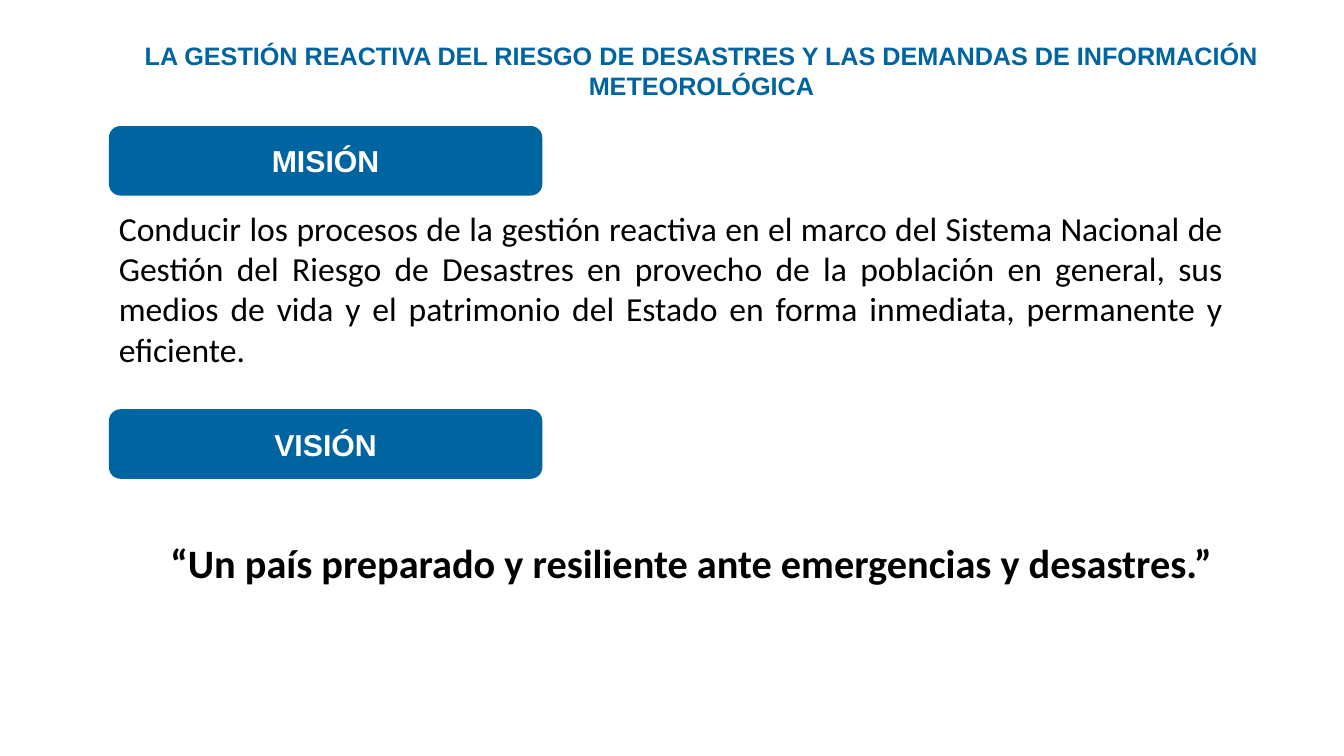
from typing import NamedTuple

from pptx import Presentation
from pptx.dml.color import RGBColor
from pptx.enum.shapes import MSO_SHAPE as Preset
from pptx.enum.text import MSO_ANCHOR as Anchor, PP_ALIGN as Align
from pptx.slide import Slide
from pptx.text.text import TextFrame
from pptx.util import Pt

BLUE = "0064A0"
WHITE = "FFFFFF"
BLACK = "000000"
BANNER_LEFT, BANNER_WIDTH, BANNER_HEIGHT = 77.8, 309.6, 49.7


class Style(NamedTuple):
    font: str
    size: float
    color: str
    bold: bool = True
    align: Align = Align.CENTER


class TextBlock(NamedTuple):
    text: str
    left: float
    top: float
    width: float
    height: float
    style: Style


class Banner(NamedTuple):
    label: str
    top: float


BANNER_STYLE = Style("Arial", 21.6, WHITE)

TEXT_BLOCKS = [
    TextBlock(
        "LA GESTIÓN REACTIVA DEL RIESGO DE DESASTRES Y LAS DEMANDAS DE "
        "INFORMACIÓN METEOROLÓGICA",
        83.5, 25.2, 835.2, 51.1, Style("Arial", 18, BLUE)),
    TextBlock(
        "Conducir los procesos de la gestión reactiva en el marco del Sistema "
        "Nacional de Gestión del Riesgo de Desastres en provecho de la población "
        "en general, sus medios de vida y el patrimonio del Estado en forma "
        "inmediata, permanente y eficiente.",
        77.8, 144.7, 802.8, 123.8,
        Style("Calibri", 24, BLACK, bold=False, align=Align.JUSTIFY)),
    TextBlock(
        "“Un país preparado y resiliente ante emergencias y desastres.”",
        77.8, 380.9, 832.3, 42.5, Style("Calibri", 28.8, BLACK)),
]

BANNERS = [Banner("MISIÓN", 90), Banner("VISIÓN", 292.3)]


def rgb(color: str) -> RGBColor:
    return RGBColor.from_string(color)


def write(frame: TextFrame, text: str, style: Style) -> None:
    frame.word_wrap = True
    frame.text = text
    paragraph = frame.paragraphs[0]
    paragraph.alignment = style.align
    font = paragraph.runs[0].font
    font.name = style.font
    font.size = Pt(style.size)
    font.bold = style.bold
    font.color.rgb = rgb(style.color)


def add_text_block(slide: Slide, block: TextBlock) -> None:
    box = slide.shapes.add_textbox(
        Pt(block.left), Pt(block.top), Pt(block.width), Pt(block.height))
    write(box.text_frame, block.text, block.style)


def add_banner(slide: Slide, banner: Banner) -> None:
    plate = slide.shapes.add_shape(
        Preset.ROUNDED_RECTANGLE, Pt(BANNER_LEFT), Pt(banner.top),
        Pt(BANNER_WIDTH), Pt(BANNER_HEIGHT))
    plate.shadow.inherit = False
    plate.fill.solid()
    plate.fill.fore_color.rgb = rgb(BLUE)
    plate.line.fill.background()
    plate.text_frame.vertical_anchor = Anchor.MIDDLE
    write(plate.text_frame, banner.label, BANNER_STYLE)


def main() -> None:
    deck = Presentation()
    deck.slide_width, deck.slide_height = Pt(960), Pt(540)
    slide = deck.slides.add_slide(deck.slide_layouts[6])

    # Title, mission statement and vision statement
    for block in TEXT_BLOCKS:
        add_text_block(slide, block)

    # Section banners
    for banner in BANNERS:
        add_banner(slide, banner)

    deck.save("out.pptx")


if __name__ == "__main__":
    main()
